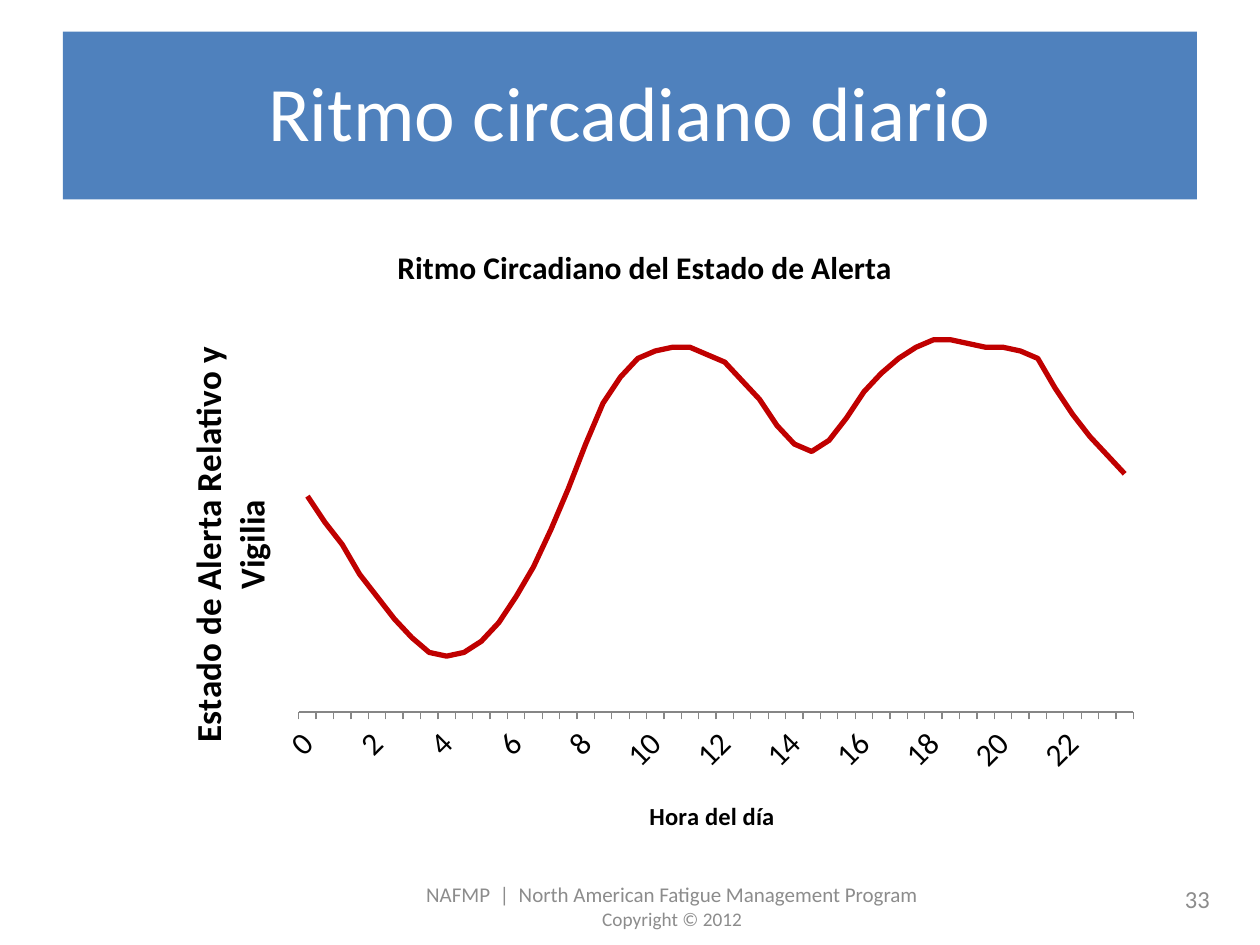
import pptx
import pptx.chart.data
import pptx.dml.color
import pptx.enum.chart
import pptx.enum.shapes
import pptx.enum.text
import pptx.oxml
import pptx.oxml.ns
import pptx.util
from pptx.util import Cm, Pt

COLORS = {"bar": "4F81BD", "white": "FFFFFF", "black": "000000",
          "grey": "8C8C8C", "axis": "868686", "curve": "C00000"}
ALIGN = pptx.enum.text.PP_ALIGN
ALERTNESS = [58, 51, 45, 37, 31, 25, 20, 16, 15, 16, 19, 24,
             31, 39, 49, 60, 72, 83, 90, 95, 97, 98, 98, 96,
             94, 89, 84, 77, 72, 70, 73, 79, 86, 91, 95, 98,
             100, 100, 99, 98, 98, 97, 95, 87, 80, 74, 69, 64]


def rgb(name):
    return pptx.dml.color.RGBColor.from_string(COLORS[name])


def format_font(font, size, color="black", bold=False):
    font.name = "Calibri"
    font.size = Pt(size)
    font.bold = bold
    font.color.rgb = rgb(color)


def add_text(tf, text, size, color="black", bold=False, align=ALIGN.CENTER,
             spacing=None, new=False):
    p = tf.add_paragraph() if new else tf.paragraphs[0]
    p.alignment = align
    if spacing:
        p.line_spacing = Pt(spacing)
    r = p.add_run()
    r.text = text
    format_font(r.font, size, color, bold)


def add_box(s, left, top, width, height):
    tf = s.shapes.add_textbox(Cm(left), Cm(top), Cm(width), Cm(height)).text_frame
    tf.word_wrap = True
    tf.vertical_anchor = pptx.enum.text.MSO_ANCHOR.MIDDLE
    return tf


def add_title(s, text):
    title = s.shapes.title
    title.left, title.top, title.width, title.height = Cm(1.27), Cm(0.76), Cm(22.86), Cm(3.18)
    title.text_frame.vertical_anchor = pptx.enum.text.MSO_ANCHOR.MIDDLE
    add_text(title.text_frame, text, 44, "white", spacing=45.8)
    bar = s.shapes.add_shape(pptx.enum.shapes.MSO_SHAPE.RECTANGLE,
                             Cm(1.27), Cm(0.64), Cm(22.86), Cm(3.38))
    bar.shadow.inherit = False
    bar.fill.solid()
    bar.fill.fore_color.rgb = rgb("bar")
    bar.line.fill.background()
    title.element.addprevious(bar.element)


def set_layout(parent, x, y, w=None, h=None):
    inner = "" if w is None else '<c:layoutTarget val="inner"/>'
    size = "" if w is None else f'<c:w val="{w}"/><c:h val="{h}"/>'
    layout = pptx.oxml.parse_xml(
        f'<c:layout {pptx.oxml.ns.nsdecls("c")}><c:manualLayout>{inner}'
        '<c:xMode val="edge"/><c:yMode val="edge"/>'
        f'<c:x val="{x}"/><c:y val="{y}"/>{size}</c:manualLayout></c:layout>')
    for old in parent.findall(pptx.oxml.ns.qn("c:layout")):
        parent.remove(old)
    text = parent.find(pptx.oxml.ns.qn("c:tx"))
    if text is None:
        parent.insert(0, layout)
    else:
        text.addnext(layout)


def add_axis_title(axis, text, size, x, y):
    tf = axis.axis_title.text_frame
    add_text(tf, text, size, bold=True)
    set_layout(axis.axis_title._element, x, y)
    return tf


def add_alertness_chart(s):
    data = pptx.chart.data.CategoryChartData()
    data.categories = [f"{i / 2:g}" for i in range(len(ALERTNESS))]
    data.add_series("Series 1", ALERTNESS)
    chart = s.shapes.add_chart(pptx.enum.chart.XL_CHART_TYPE.LINE,
                               Cm(2.74), Cm(4.45), Cm(20.52), Cm(12.7), data).chart
    format_font(chart.font, 10)
    chart.has_legend = False
    chart.has_title = True
    add_text(chart.chart_title.text_frame, "Ritmo Circadiano del Estado de Alerta", 18, bold=True)
    chart.plots[0].vary_by_categories = False
    qn = pptx.oxml.ns.qn
    set_layout(chart._chartSpace.find(f'{qn("c:chart")}/{qn("c:plotArea")}'),
               0.16, 0.13, 0.82, 0.65)

    series = chart.plots[0].series[0]
    series.smooth = False
    series.marker.style = pptx.enum.chart.XL_MARKER_STYLE.NONE
    series.format.line.color.rgb = rgb("curve")
    series.format.line.width = Pt(3)

    hours = chart.category_axis
    hours.major_tick_mark = pptx.enum.chart.XL_TICK_MARK.OUTSIDE
    hours.format.line.color.rgb = rgb("axis")
    format_font(hours.tick_labels.font, 18)
    hours._element.txPr.bodyPr.set("rot", "-2700000")
    add_axis_title(hours, "Hora del día", 14, 0.5, 0.91)
    for tag, value in (("c:tickLblSkip", "4"), ("c:tickMarkSkip", "1")):
        skip = pptx.oxml.parse_xml(f'<{tag} {pptx.oxml.ns.nsdecls("c")} val="{value}"/>')
        hours._element.find(qn("c:noMultiLvlLbl")).addprevious(skip)

    level = chart.value_axis
    level.minimum_scale, level.maximum_scale = 0, 110
    level.has_major_gridlines = False
    level.visible = False
    tf = add_axis_title(level, "Estado de Alerta Relativo y Vigilia", 20, 0.04, 0.19)
    tf._txBody.bodyPr.set("rot", "-5400000")
    tf._txBody.bodyPr.set("vert", "horz")


def main():
    prs = pptx.Presentation()
    prs.slide_width, prs.slide_height = Cm(25.4), Cm(19.05)
    s = prs.slides.add_slide(prs.slide_layouts[5])
    s.background.fill.solid()
    s.background.fill.fore_color.rgb = rgb("white")
    add_title(s, "Ritmo circadiano diario")
    add_alertness_chart(s)
    footer = add_box(s, 7.62, 17.78, 11.86, 0.97)
    add_text(footer, "NAFMP  |  North American Fatigue Management Program", 12, "grey")
    add_text(footer, "Copyright © 2012", 11, "grey", new=True)
    add_text(add_box(s, 18.72, 17.6, 5.92, 1.02), "33", 14, "grey", align=ALIGN.RIGHT)
    prs.save("out.pptx")


if __name__ == "__main__":
    main()
